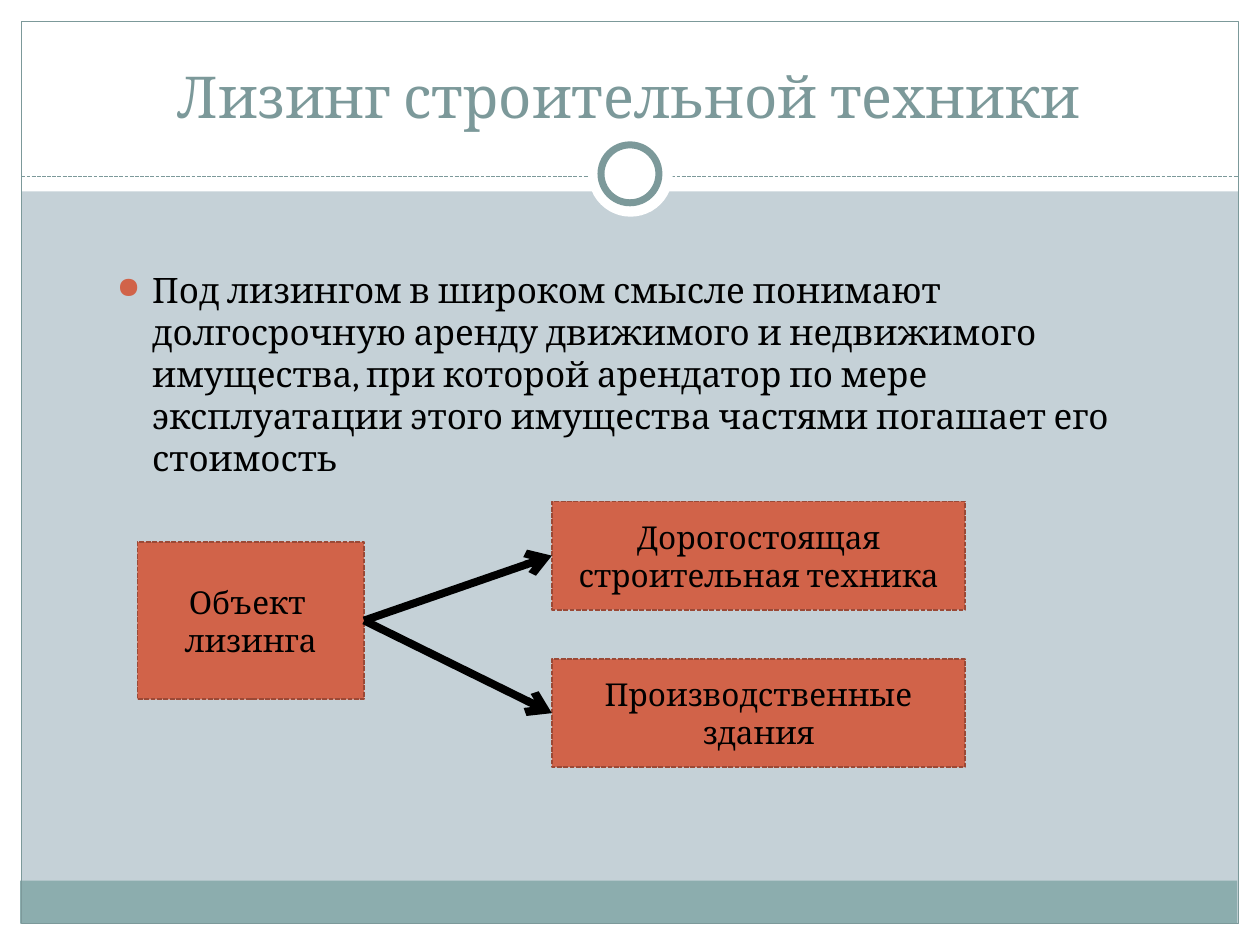
from pptx import Presentation
from pptx.util import Inches, Pt
from pptx.dml.color import RGBColor
from pptx.enum.dml import MSO_LINE_DASH_STYLE as Dash
from pptx.enum.shapes import MSO_CONNECTOR_TYPE as Link, MSO_SHAPE as Shape
from pptx.enum.text import MSO_ANCHOR as Anchor, PP_ALIGN as Align
from pptx.oxml.ns import qn
from lxml.etree import SubElement

COLORS = {
    "background": "C5D1D7", "white": "FFFFFF", "band": "8CADAE",
    "accent": "7C999A", "box": "D16349", "border": "9B4936", "black": "000000",
}


def color(name):
    return RGBColor.from_string(COLORS[name])


def write(shape, lines, size, text_color, anchor, align):
    frame = shape.text_frame
    settings = {"word_wrap": True, "vertical_anchor": anchor}
    for key, value in settings.items():
        setattr(frame, key, value)
    for index, line in enumerate(lines):
        para = frame.paragraphs[0] if index == 0 else frame.add_paragraph()
        para.alignment = align
        span = para.add_run()
        span.text = line
        for key, value in {"name": "Cambria", "size": Pt(size)}.items():
            setattr(span.font, key, value)
        span.font.color.rgb = color(text_color)


deck = Presentation()
deck.slide_width, deck.slide_height = Inches(10), Inches(7.5)
page = deck.slides.add_slide(deck.slide_layouts[6])
page.background.fill.solid()
page.background.fill.fore_color.rgb = color("background")

frame_parts = [
    (Shape.RECTANGLE, (0, 7.33, 10, 0.17), "white", None, 0, None),
    (Shape.RECTANGLE, (0, 0, 10, 1.52), "white", None, 0, None),
    (Shape.RECTANGLE, (0, 0, 0.17, 7.5), "white", None, 0, None),
    (Shape.RECTANGLE, (9.83, 0, 0.17, 7.5), "white", None, 0, None),
    (Shape.RECTANGLE, (0.16, 6.99, 9.66, 0.34), "band", None, 0, None),
    (Shape.RECTANGLE, (0.17, 0.17, 9.66, 7.16), None, "accent", 0.75, None),
    ("divider", (0.17, 1.4, 9.83, 1.4), None, "accent", 0.75, Dash.SQUARE_DOT),
    (Shape.OVAL, (4.67, 1.05, 0.67, 0.67), "white", None, 0, None),
    (Shape.OVAL, (4.77, 1.15, 0.46, 0.46), "white", "accent", 4, None),
]
diagram_boxes = [
    ((1.09, 4.3, 1.8, 1.25), ["Объект ", "лизинга"]),
    ((4.38, 3.98, 3.28, 0.86), ["Дорогостоящая строительная техника"]),
    ((4.38, 5.23, 3.28, 0.86), ["Производственные здания"]),
]
box_parts = [(Shape.RECTANGLE, place, "box", "border", 0.9, Dash.SQUARE_DOT)
             for place, _ in diagram_boxes]

drawn = []
for kind, place, fill, line, width, dash in frame_parts + box_parts:
    place = [Inches(value) for value in place]
    if kind == "divider":
        shape = page.shapes.add_connector(Link.STRAIGHT, *place)
        SubElement(shape._element.spPr, qn("a:effectLst"))
    else:
        shape = page.shapes.add_shape(kind, *place)
        shape.shadow.inherit = False
        if fill:
            shape.fill.solid()
            shape.fill.fore_color.rgb = color(fill)
        else:
            shape.fill.background()
    if line:
        shape.line.color.rgb = color(line)
        for key, value in {"width": Pt(width), "dash_style": dash}.items():
            setattr(shape.line, key, value)
    else:
        shape.line.fill.background()
    drawn.append(shape)

boxes = drawn[len(frame_parts):]
for box, (_, lines) in zip(boxes, diagram_boxes):
    write(box, lines, 18, "black", Anchor.MIDDLE, Align.CENTER)

title = page.shapes.add_textbox(Inches(0.33), Inches(0.25), Inches(9.33), Inches(0.83))
write(title, ["Лизинг строительной техники"], 33, "accent", Anchor.BOTTOM, Align.CENTER)

body = page.shapes.add_textbox(Inches(0.83), Inches(2.08), Inches(8.42), Inches(1.74))
definition = (
    "Под лизингом в широком смысле понимают долгосрочную аренду движимого и "
    "недвижимого имущества, при которой арендатор по мере эксплуатации этого "
    "имущества частями погашает его стоимость"
)
write(body, [definition], 20, "black", Anchor.TOP, Align.LEFT)
para = body.text_frame.paragraphs[0]
para.space_before = Pt(4)
bullet = para._p.get_or_add_pPr()
for key, value in {"marL": Inches(0.28), "indent": -Inches(0.28)}.items():
    bullet.set(key, str(value))
bullet_color = SubElement(bullet, qn("a:buClr"))
SubElement(bullet_color, qn("a:srgbClr"), val=COLORS["box"])
SubElement(bullet, qn("a:buSzPct"), val="85000")
SubElement(bullet, qn("a:buChar"), char="●")

source, *targets = boxes
for target in targets:
    arrow = page.shapes.add_connector(Link.STRAIGHT, 0, 0, 0, 0)
    arrow.begin_connect(source, 3)
    arrow.end_connect(target, 1)
    arrow.line.color.rgb = color("black")
    arrow.line.width = Pt(4.5)
    SubElement(arrow.line._get_or_add_ln(), qn("a:tailEnd"), type="arrow")
    SubElement(arrow._element.spPr, qn("a:effectLst"))

deck.save("out.pptx")
